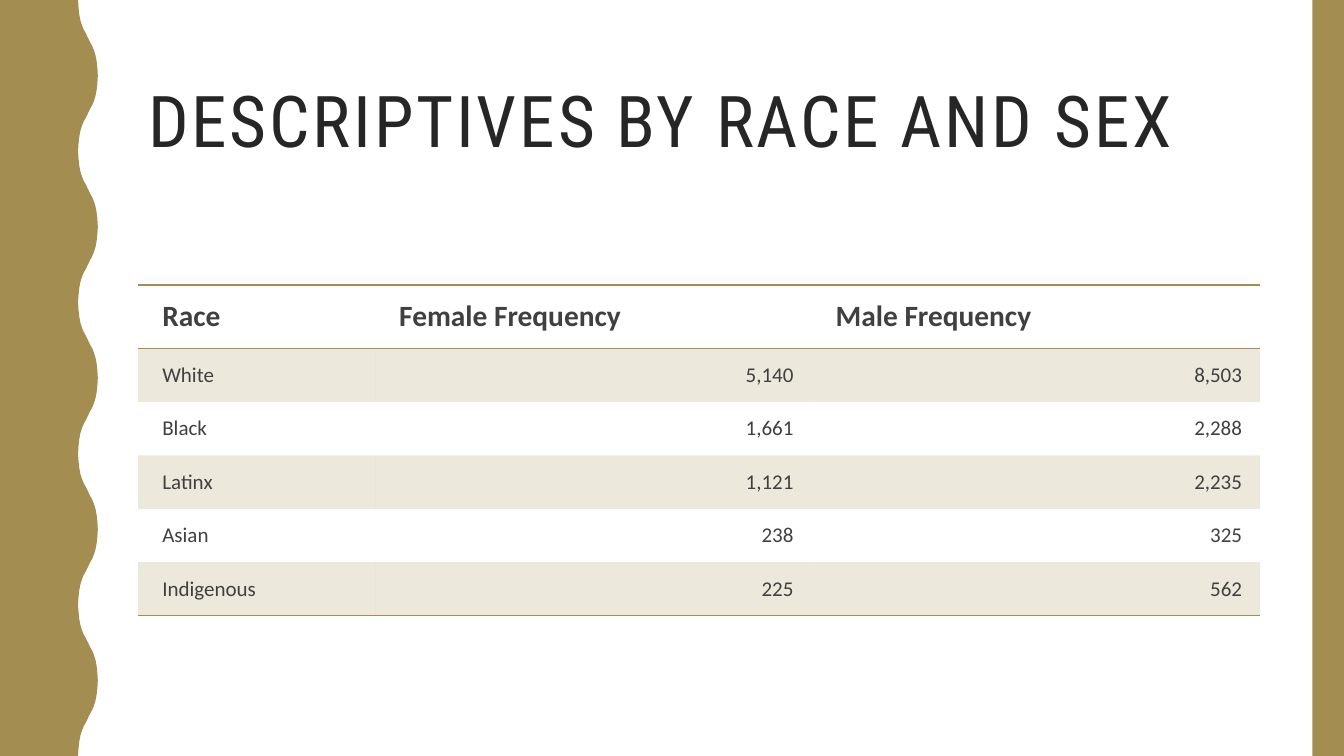
from dataclasses import dataclass

from lxml import etree
from pptx import Presentation
from pptx.dml.color import RGBColor
from pptx.enum.shapes import MSO_SHAPE
from pptx.enum.text import MSO_ANCHOR, MSO_AUTO_SIZE, PP_ALIGN
from pptx.oxml.ns import qn
from pptx.util import Inches, Pt

RECTANGLE = MSO_SHAPE.RECTANGLE
MIDDLE = MSO_ANCHOR.MIDDLE
NO_AUTOFIT = MSO_AUTO_SIZE.NONE
LEFT, RIGHT = PP_ALIGN.LEFT, PP_ALIGN.RIGHT

GOLD = RGBColor(0xA3, 0x8D, 0x51)
INK = RGBColor(0x26, 0x26, 0x26)
GREY = RGBColor(0x40, 0x40, 0x40)

SLIDE_W, SLIDE_H = Inches(13.333), Inches(7.5)
PLAIN_TABLE_STYLE = "{2D5ABB26-0587-4C30-8999-92F81FD0307C}"

# Lengths below are percentages of the slide's width or height.
CONTENT_LEFT = 10.28
COLUMN_WIDTHS = (17.63, 32.48, 33.38)
HEADER_HEIGHT, ROW_HEIGHT = 8.4, 7.07
TABLE_TOP = 37.7
WAVE_COUNT = 5
WAVE_LEFT, WAVE_RIGHT = 5.81, 7.28

# First half of one swing: (share of the swing, share of its height).
EASE_IN = ((0, 0), (0.02, 0.09), (0.06, 0.19), (0.12, 0.27),
           (0.19, 0.33), (0.28, 0.39), (0.39, 0.44), (0.5, 0.5))


@dataclass(frozen=True)
class RaceCount:
    race: str
    female: str
    male: str


HEADER = RaceCount("Race", "Female Frequency", "Male Frequency")
COUNTS = (
    RaceCount("White", "5,140", "8,503"),
    RaceCount("Black", "1,661", "2,288"),
    RaceCount("Latinx", "1,121", "2,235"),
    RaceCount("Asian", "238", "325"),
    RaceCount("Indigenous", "225", "562"),
)


def across(percent: float) -> int:
    return round(SLIDE_W * percent / 100)


def down(percent: float) -> int:
    return round(SLIDE_H * percent / 100)


def paint_gold(shape) -> None:
    shape.shadow.inherit = False
    shape.fill.solid()
    shape.fill.fore_color.rgb = GOLD
    shape.line.fill.background()


def add_title(s, text: str) -> None:
    title = s.shapes.title
    title.left, title.top = across(CONTENT_LEFT), down(5.6)
    title.width, title.height = across(sum(COLUMN_WIDTHS)), down(21.73)
    tf = title.text_frame
    tf.text = text
    tf.word_wrap = True
    tf.auto_size = NO_AUTOFIT
    tf.vertical_anchor = MIDDLE
    p = tf.paragraphs[0]
    p.alignment = LEFT
    p.line_spacing = 0.9
    font = p.runs[0].font
    font.name, font.size, font.color.rgb = "Roboto Condensed", Pt(51), INK
    p.runs[0]._r.get_or_add_rPr().set("spc", "200")


def add_wavy_edge(s) -> None:
    """Fill the left edge up to a line that swings out and back."""
    ease_out = [(1 - x, 1 - y) for x, y in reversed(EASE_IN[:-1])]
    swing_out = [*EASE_IN, *ease_out]
    swing_back = [(1 - x, 1 + y) for x, y in swing_out[1:]]
    half_wave = 100 / WAVE_COUNT / 2
    points = [
        (across(WAVE_LEFT + x * (WAVE_RIGHT - WAVE_LEFT)),
         down((2 * wave + y) * half_wave))
        for wave in range(WAVE_COUNT)
        for x, y in swing_out + swing_back
    ]
    builder = s.shapes.build_freeform(0, 0)
    builder.add_line_segments([*points, (0, SLIDE_H)], close=True)
    paint_gold(builder.convert_to_shape())


def add_right_band(s) -> None:
    left = across(97.66)
    paint_gold(s.shapes.add_shape(RECTANGLE, left, 0, SLIDE_W - left, SLIDE_H))


def add_border(cell, tag: str) -> None:
    line = etree.SubElement(cell._tc.get_or_add_tcPr(), qn(tag), w=str(Pt(1)))
    fill = etree.SubElement(line, qn("a:solidFill"))
    etree.SubElement(fill, qn("a:srgbClr"), val=str(GOLD))


def tint(cell) -> None:
    cell.fill.solid()
    cell.fill.fore_color.rgb = GOLD
    color = cell._tc.tcPr.find(f".//{qn('a:solidFill')}[last()]/{qn('a:srgbClr')}")
    for fill in cell._tc.tcPr.findall(qn("a:solidFill")):
        color = fill.find(qn("a:srgbClr"))
    etree.SubElement(color, qn("a:alpha"), val="20000")


def write_cell(cell, text: str, is_header: bool, is_number: bool) -> None:
    cell.margin_left, cell.margin_right = Inches(0.24), Inches(0.18)
    cell.margin_top = cell.margin_bottom = Inches(0.12)
    cell.vertical_anchor = MIDDLE
    cell.text_frame.text = text
    p = cell.text_frame.paragraphs[0]
    p.alignment = RIGHT if is_number else LEFT
    font = p.runs[0].font
    font.name, font.color.rgb = "Calibri", GREY
    font.size, font.bold = Pt(21 if is_header else 15), is_header


def add_count_table(s) -> None:
    records = (HEADER, *COUNTS)
    heights = [HEADER_HEIGHT] + [ROW_HEIGHT] * len(COUNTS)
    table = s.shapes.add_table(
        len(records), len(COLUMN_WIDTHS), across(CONTENT_LEFT), down(TABLE_TOP),
        across(sum(COLUMN_WIDTHS)), down(sum(heights))).table
    table.horz_banding = False
    table._tbl.tblPr.find(qn("a:tableStyleId")).text = PLAIN_TABLE_STYLE
    for column, width in zip(table.columns, COLUMN_WIDTHS):
        column.width = across(width)
    for i, (record, height) in enumerate(zip(records, heights)):
        table.rows[i].height = down(height)
        is_header = i == 0
        for j, text in enumerate((record.race, record.female, record.male)):
            cell = table.cell(i, j)
            write_cell(cell, text, is_header, is_number=j > 0 and not is_header)
            if is_header:
                add_border(cell, "a:lnT")
            if is_header or i == len(COUNTS):
                add_border(cell, "a:lnB")
            if i % 2:
                tint(cell)
            else:
                cell.fill.background()


def main() -> None:
    prs = Presentation()
    prs.slide_width, prs.slide_height = SLIDE_W, SLIDE_H
    s = prs.slides.add_slide(prs.slide_layouts[5])
    add_title(s, "DESCRIPTIVES BY RACE AND SEX")
    add_wavy_edge(s)
    add_right_band(s)
    add_count_table(s)
    prs.save("out.pptx")


if __name__ == "__main__":
    main()
